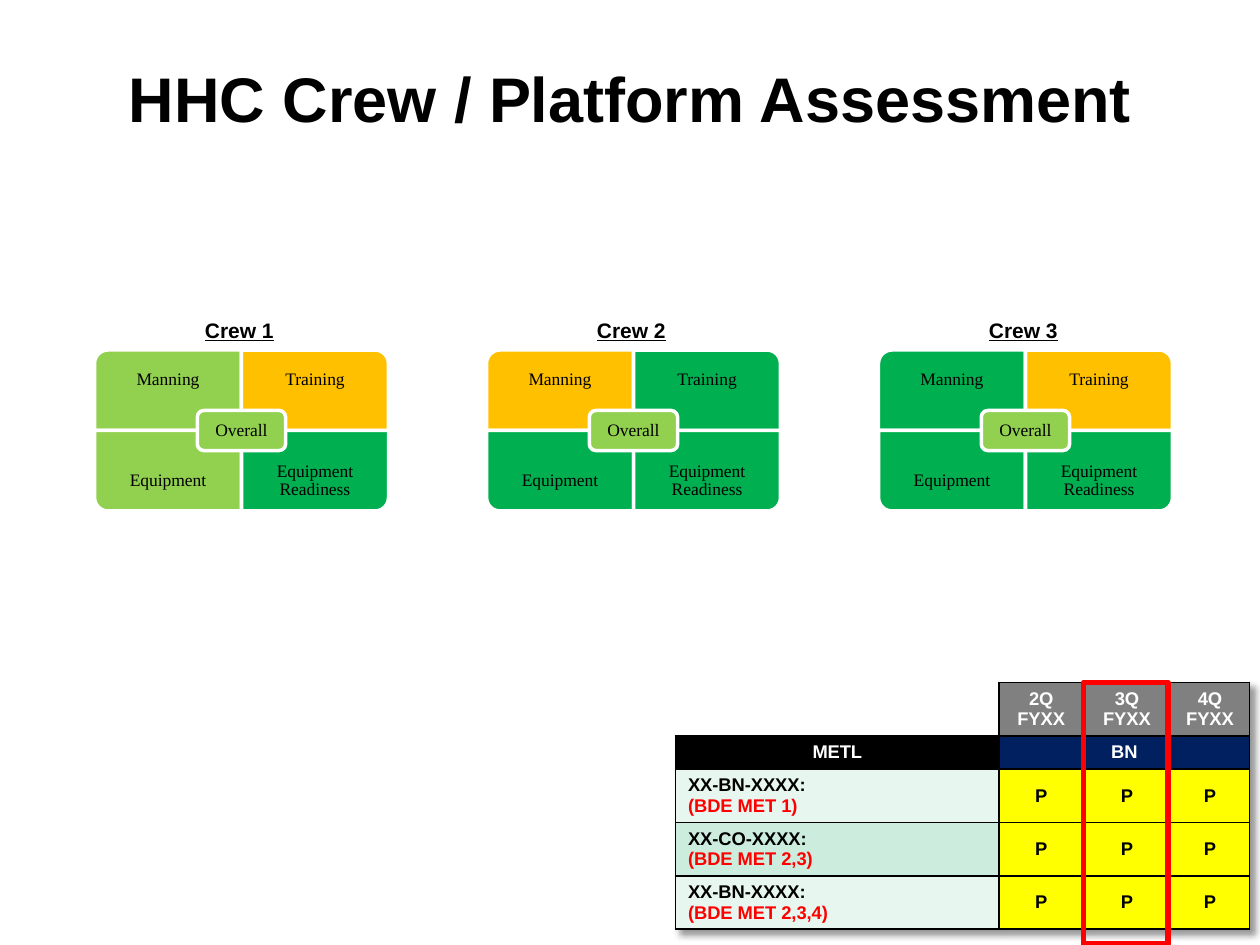
from dataclasses import dataclass

from lxml.etree import SubElement
from pptx import Presentation
from pptx.dml.color import RGBColor
from pptx.enum.shapes import MSO_SHAPE
from pptx.enum.text import MSO_ANCHOR, MSO_AUTO_SIZE, PP_ALIGN
from pptx.oxml import parse_xml
from pptx.oxml.ns import nsdecls, qn
from pptx.util import Pt


@dataclass(frozen=True)
class Theme:
    sans: str = "Arial"
    serif: str = "Times New Roman"
    title_size: float = 36
    label_size: float = 12
    table_size: float = 10.5
    rating_size: float = 10
    black: str = "000000"
    white: str = "FFFFFF"
    red: str = "FF0000"
    amber: str = "FFC000"
    light_green: str = "92D050"
    green: str = "00B050"
    gray: str = "808080"
    navy: str = "002060"
    yellow: str = "FFFF00"
    bands: tuple = ("E7F6EF", "CCECDE")


THEME = Theme()

TITLE = "HHC Crew / Platform Assessment"
RATING_AREAS = ["Manning", "Training", "Equipment", "Equipment Readiness"]
OVERALL = ("Overall", THEME.light_green)
CREWS = {  # ratings in the order of RATING_AREAS
    "Crew 1": [THEME.light_green, THEME.amber, THEME.light_green, THEME.green],
    "Crew 2": [THEME.amber, THEME.green, THEME.green, THEME.green],
    "Crew 3": [THEME.green, THEME.amber, THEME.green, THEME.green],
}
QUARTERS = ["2Q FYXX", "3Q FYXX", "4Q FYXX"]
METL_HEADING, UNIT_HEADING = "METL", "BN"
TASKS = [
    ("XX-BN-XXXX:", "(BDE MET 1)", "PPP"),
    ("XX-CO-XXXX:", "(BDE MET 2,3)", "PPP"),
    ("XX-BN-XXXX:", "(BDE MET 2,3,4)", "PPP"),
]

TITLE_BOX = (36, 21.6, 648, 68.4)
CREW_LEFT, CREW_TOP, CREW_PITCH = 54, 200, 224
QUADRANT_W, QUADRANT_H, RATING_H = 84, 46, 34.5
OVERALL_W, OVERALL_H = 50.5, 23
LABEL_LEFT, LABEL_TOP, LABEL_W, LABEL_H = 110, 178, 54, 21.6
CORNER_TURNS = [270, 0, 180, 90]
TABLE_BOX = (386, 390, 328, 150)
COLUMN_WIDTHS = [185, 48, 50, 45]
ROW_HEIGHTS = [25, 16, 26, 26, 26]
CURRENT_QUARTER_BOX = (619, 390, 48.5, 149.5)


def points(*lengths):
    return [Pt(length) for length in lengths]


def rgb(color):
    return RGBColor.from_string(color)


def style_text(paragraph, size, color, font=THEME.sans, bold=True,
               align=PP_ALIGN.CENTER):
    paragraph.alignment = align
    for run in paragraph.runs:
        run.font.name, run.font.size, run.font.bold = font, Pt(size), bold
        run.font.color.rgb = rgb(color)


def set_insets(frame, inset):
    frame.margin_left = frame.margin_right = Pt(inset)
    frame.margin_top = frame.margin_bottom = Pt(inset)


def write_rating(frame, text, inset):
    frame.word_wrap = True
    frame.vertical_anchor = MSO_ANCHOR.MIDDLE
    set_insets(frame, inset)
    frame.text = text
    frame.paragraphs[0].line_spacing = 0.9
    style_text(frame.paragraphs[0], THEME.rating_size, THEME.black,
               THEME.serif, bold=False)


def add_panel(shapes, preset, box, line_color, line_width, fill=None):
    panel = shapes.add_shape(preset, *points(*box))
    panel.shadow.inherit = False
    if fill:
        panel.fill.solid()
        panel.fill.fore_color.rgb = rgb(fill)
    else:
        panel.fill.background()
    panel.line.color.rgb = rgb(line_color)
    panel.line.width = Pt(line_width)
    return panel


def add_crew(slide, left, ratings):
    """Four rated quadrants, rounded on the outside, around an overall rating."""
    shapes = slide.shapes.add_group_shape().shapes
    for i, (area, color) in enumerate(zip(RATING_AREAS, ratings)):
        row, column = divmod(i, 2)
        x = left + column * QUADRANT_W
        y = CREW_TOP + row * QUADRANT_H
        turn = CORNER_TURNS[i]
        w, h = (QUADRANT_W, QUADRANT_H) if turn % 180 == 0 else (QUADRANT_H, QUADRANT_W)
        box = (x + (QUADRANT_W - w) / 2, y + (QUADRANT_H - h) / 2, w, h)
        quadrant = add_panel(shapes, MSO_SHAPE.ROUND_1_RECTANGLE, box,
                             THEME.white, 2, color)
        quadrant.rotation = turn
        text_top = y + row * (QUADRANT_H - RATING_H)
        rating = shapes.add_textbox(*points(x, text_top, QUADRANT_W, RATING_H))
        write_rating(rating.text_frame, area, 5.6)
    text, color = OVERALL
    center_box = (left + QUADRANT_W - OVERALL_W / 2,
                  CREW_TOP + QUADRANT_H - OVERALL_H / 2, OVERALL_W, OVERALL_H)
    overall = add_panel(shapes, MSO_SHAPE.ROUNDED_RECTANGLE, center_box,
                        THEME.white, 2, color)
    write_rating(overall.text_frame, text, 2.8)


def add_crew_label(slide, left, name):
    label = slide.shapes.add_textbox(*points(left, LABEL_TOP, LABEL_W, LABEL_H))
    label.text_frame.word_wrap = False
    label.text_frame.auto_size = MSO_AUTO_SIZE.SHAPE_TO_FIT_TEXT
    label.text_frame.text = name
    paragraph = label.text_frame.paragraphs[0]
    style_text(paragraph, THEME.label_size, THEME.black, align=PP_ALIGN.LEFT)
    paragraph.runs[0].font.underline = True


def set_borders(cell, hidden=()):
    properties = cell._tc.get_or_add_tcPr()
    for position, side in enumerate(("lnL", "lnR", "lnT", "lnB")):
        border = parse_xml(f'<a:{side} {nsdecls("a")} w="12700"/>')
        if side in hidden:
            SubElement(border, qn("a:noFill"))
        else:
            fill = SubElement(border, qn("a:solidFill"))
            SubElement(fill, qn("a:srgbClr"), val=THEME.black)
        properties.insert(position, border)


def fill_cell(cell, lines, fill, colors, align=PP_ALIGN.CENTER):
    cell.vertical_anchor = MSO_ANCHOR.MIDDLE
    cell.fill.solid()
    cell.fill.fore_color.rgb = rgb(fill)
    cell.text_frame.text = "\n".join(lines)
    for paragraph, color in zip(cell.text_frame.paragraphs, colors):
        style_text(paragraph, THEME.table_size, color, align=align)


def add_metl_table(slide):
    frame = slide.shapes.add_table(len(ROW_HEIGHTS), len(COLUMN_WIDTHS),
                                   *points(*TABLE_BOX))
    table = frame.table
    for column, width in zip(table.columns, COLUMN_WIDTHS):
        column.width = Pt(width)
    for row, height in zip(table.rows, ROW_HEIGHTS):
        row.height = Pt(height)
    frame.height = Pt(TABLE_BOX[3])
    table._tbl.tblPr.insert(0, parse_xml(
        f'<a:effectLst {nsdecls("a")}><a:outerShdw blurRad="50800" dist="50800" '
        'dir="2700000"><a:srgbClr val="000000"><a:alpha val="40000"/>'
        '</a:srgbClr></a:outerShdw></a:effectLst>'))

    table.cell(0, 0).fill.background()
    for column, quarter in enumerate(QUARTERS, 1):
        fill_cell(table.cell(0, column), [quarter], THEME.gray, [THEME.white])
    fill_cell(table.cell(1, 0), [METL_HEADING], THEME.black, [THEME.white])
    table.cell(1, 1).merge(table.cell(1, len(QUARTERS)))
    fill_cell(table.cell(1, 1), [UNIT_HEADING], THEME.navy, [THEME.white])
    for i, (task, supported, ratings) in enumerate(TASKS):
        fill_cell(table.cell(i + 2, 0), [task, supported], THEME.bands[i % 2],
                  [THEME.black, THEME.red], PP_ALIGN.LEFT)
        for column, rating in enumerate(ratings, 1):
            cell = table.cell(i + 2, column)
            set_insets(cell, 3.6)
            fill_cell(cell, [rating], THEME.yellow, [THEME.black])
    corner = table.cell(0, 0)
    for cell in table.iter_cells():
        set_borders(cell, ("lnL", "lnT") if cell == corner else ())


def main():
    deck = Presentation()
    deck.slide_width, deck.slide_height = points(720, 540)
    slide = deck.slides.add_slide(deck.slide_layouts[5])
    title = slide.shapes.title
    title.left, title.top, title.width, title.height = points(*TITLE_BOX)
    title.text_frame.text = TITLE
    title.text_frame.vertical_anchor = MSO_ANCHOR.MIDDLE
    style_text(title.text_frame.paragraphs[0], THEME.title_size, THEME.black)

    add_metl_table(slide)
    add_panel(slide.shapes, MSO_SHAPE.RECTANGLE, CURRENT_QUARTER_BOX, THEME.red, 3)
    for i, (name, ratings) in enumerate(CREWS.items()):
        add_crew(slide, CREW_LEFT + i * CREW_PITCH, ratings)
        add_crew_label(slide, LABEL_LEFT + i * CREW_PITCH, name)
    deck.save("out.pptx")


if __name__ == "__main__":
    main()
